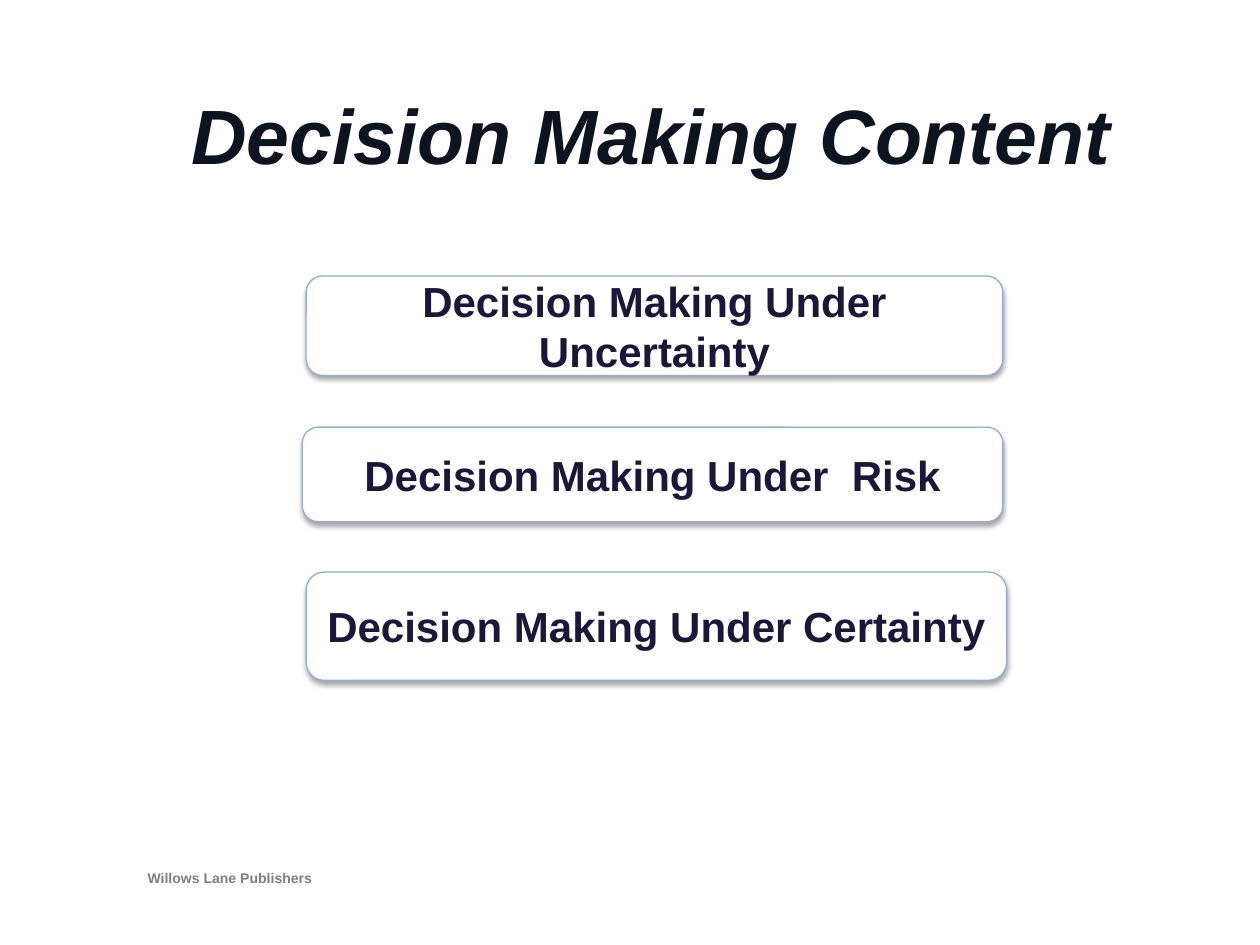
from lxml import etree
from pptx import Presentation, util as u
from pptx.dml.color import RGBColor
from pptx.enum import shapes, text
from pptx.oxml.ns import qn

COLORS = {"title": "0C1420", "topic": "1D163B", "footer": "7F7F7F",
          "fill": "FFFFFF", "line": "8EAFDA", "shadow": "000000"}

deck = Presentation()
deck.slide_width, deck.slide_height = u.Inches(10), u.Inches(7.5)
column, row = deck.slide_width / 100, deck.slide_height / 75
page = deck.slides.add_slide(deck.slide_layouts[6])


def place(left, top, width, height):
    return int(left * column), int(top * row), int(width * column), int(height * row)


def write(box, words, color, anchor, **formats):
    frame = box.text_frame
    frame.word_wrap = True
    frame.vertical_anchor = anchor
    para = frame.paragraphs[0]
    para.alignment = text.PP_ALIGN.CENTER
    span = para.add_run()
    span.text = words
    span.font.color.rgb = RGBColor.from_string(COLORS[color])
    for name, value in {"name": "Arial", "bold": True, **formats}.items():
        setattr(span.font, name, value)


title = page.shapes.add_textbox(*place(7.5, 4.8, 85, 12.5))
write(title, "Decision Making Content", "title", text.MSO_ANCHOR.MIDDLE,
      size=u.Pt(44), italic=True)
title.text_frame.margin_left = u.Inches(0.44)
title.text_frame.paragraphs[0].line_spacing = 0.9

footer = page.shapes.add_textbox(*place(2.4, 68.5, 31.7, 4))
write(footer, "Willows Lane Publishers", "footer", text.MSO_ANCHOR.TOP, size=u.Pt(8))

topics = [
    ("Uncertainty", 24.3, 21.9, 55.3, 7.9),
    (" Risk", 24, 33.9, 55.6, 7.5),
    ("Certainty", 24.3, 45.4, 55.6, 8.6),
]
for condition, *area in topics:
    box = page.shapes.add_shape(shapes.MSO_SHAPE.ROUNDED_RECTANGLE, *place(*area))
    box.fill.solid()
    box.fill.fore_color.rgb = RGBColor.from_string(COLORS["fill"])
    box.line.color.rgb = RGBColor.from_string(COLORS["line"])
    box.line.width = u.Pt(0.75)
    box.shadow.inherit = False
    effects = box._element.spPr.find(qn("a:effectLst"))
    shadow = etree.SubElement(effects, qn("a:outerShdw"), blurRad=str(u.Pt(3.1)),
                              dist=str(u.Pt(1.8)), dir="5400000", rotWithShape="0")
    shade = etree.SubElement(shadow, qn("a:srgbClr"), val=COLORS["shadow"])
    etree.SubElement(shade, qn("a:alpha"), val="35000")
    write(box, f"Decision Making Under {condition}", "topic",
          text.MSO_ANCHOR.MIDDLE, size=u.Pt(24))

deck.save("out.pptx")
